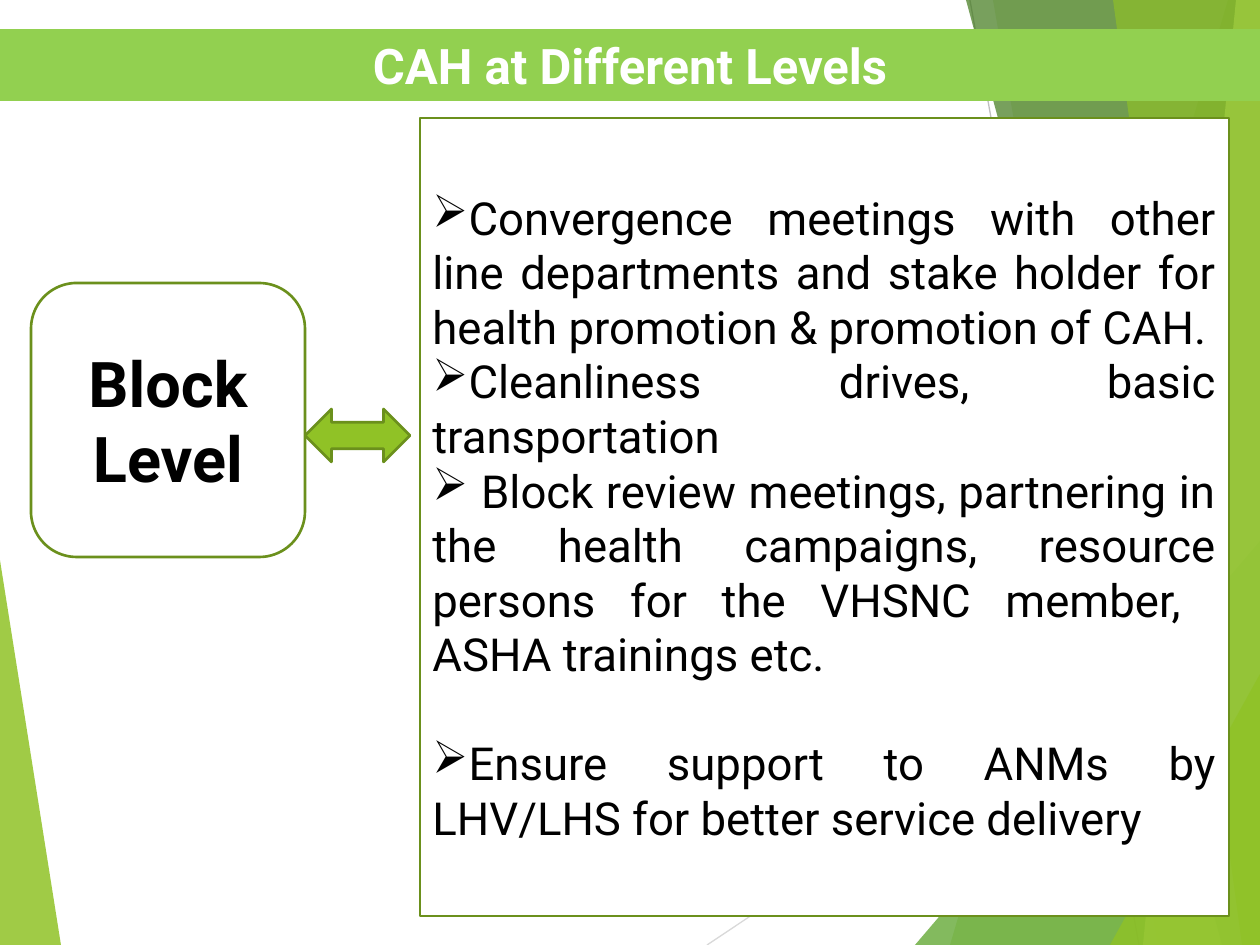
from lxml import etree
from pptx import Presentation
from pptx.dml.color import RGBColor
from pptx.enum.shapes import MSO_CONNECTOR, MSO_SHAPE
from pptx.enum.text import MSO_ANCHOR, PP_ALIGN
from pptx.oxml.ns import qn
from pptx.util import Pt

EMU_PER_PX = 914400 / 126
WIDTH, HEIGHT = 1260, 945
STRAIGHT = MSO_CONNECTOR.STRAIGHT
RECT, ROUNDED = MSO_SHAPE.RECTANGLE, MSO_SHAPE.ROUNDED_RECTANGLE
DOUBLE_ARROW = MSO_SHAPE.LEFT_RIGHT_ARROW
MIDDLE = MSO_ANCHOR.MIDDLE
CENTER, JUSTIFY = PP_ALIGN.CENTER, PP_ALIGN.JUSTIFY

GREEN, DARK_GREEN, TITLE_GREEN = "90C226", "6B901C", "92D050"
WHITE, BLACK = "FFFFFF", "000000"

# Facets: points, colour, opacity in percent
LEFT_FACET = ([(0, 560), (61, HEIGHT), (0, HEIGHT)], GREEN, 85)


def band(top_x, bottom_x):
    """Full-height facet reaching to the right edge of the slide."""
    return [(top_x, 0), (bottom_x, HEIGHT), (WIDTH, HEIGHT), (WIDTH, 0)]


def corner(left, top):
    """Triangle in the lower right corner of the slide."""
    return [(left, HEIGHT), (WIDTH, top), (WIDTH, HEIGHT)]


RIGHT_FACETS = [
    (band(1228, 950), GREEN, 30),
    (band(993, 1158), GREEN, 20),
    (corner(915, 541), "54A021", 72),
    (band(966, 1222), "3F7819", 70),
    (band(1236, 1143), "C0E474", 70),
    (band(1113, 1242), GREEN, 65),
    (corner(1110, 674), GREEN, 80),
]

ACTIVITIES = [
    "Convergence meetings with other line departments and stake holder "
    "for health promotion & promotion of CAH.",
    "Cleanliness drives, basic transportation",
    " Block review meetings, partnering in the health campaigns, resource "
    "persons for the VHSNC member,  ASHA trainings etc.",
    "Ensure support to ANMs by LHV/LHS for better service delivery",
]


def px(n):
    return round(n * EMU_PER_PX)


def rgb(value):
    return RGBColor.from_string(value)


class SlideBuilder:
    font = "Roboto"
    line_width = Pt(1.5)

    def __init__(self, slide):
        self.slide = slide

    def facet(self, points, color, opacity):
        start, *rest = points
        builder = self.slide.shapes.build_freeform(*start, scale=EMU_PER_PX)
        builder.add_line_segments(rest, close=True)
        sp = builder.convert_to_shape()
        sp.shadow.inherit = False
        sp.fill.solid()
        sp.fill.fore_color.rgb = rgb(color)
        sp.line.fill.background()
        fill_color = sp.fill._xPr.find(qn("a:solidFill"))[0]
        etree.SubElement(fill_color, qn("a:alpha"), val=str(opacity * 1000))

    def line(self, x1, y1, x2, y2, color):
        c = self.slide.shapes.add_connector(STRAIGHT, px(x1), px(y1), px(x2), px(y2))
        c.line.color.rgb = rgb(color)
        c.line.width = Pt(0.75)
        etree.SubElement(c._element.spPr, qn("a:effectLst"))

    def shape(self, kind, x, y, w, h, fill, line=None):
        sp = self.slide.shapes.add_shape(kind, px(x), px(y), px(w), px(h))
        sp.shadow.inherit = False
        sp.fill.solid()
        sp.fill.fore_color.rgb = rgb(fill)
        if line:
            sp.line.color.rgb = rgb(line)
            sp.line.width = self.line_width
        else:
            sp.line.fill.background()
        return sp

    def text(self, sp, paragraphs, size, color, align, bold=False, bullet=None):
        tf = sp.text_frame
        tf.word_wrap = True
        tf.vertical_anchor = MIDDLE
        for i, content in enumerate(paragraphs):
            p = tf.paragraphs[0] if i == 0 else tf.add_paragraph()
            p.text = content
            p.alignment = align
            p.font.name, p.font.size, p.font.bold = self.font, Pt(size), bold
            p.font.color.rgb = rgb(color)
            if bullet:
                mark = etree.Element(qn("a:buChar"), char=bullet)
                p._p.get_or_add_pPr().insert(0, mark)
        return tf


def main():
    prs = Presentation()
    prs.slide_width, prs.slide_height = px(WIDTH), px(HEIGHT)
    s = SlideBuilder(prs.slides.add_slide(prs.slide_layouts[6]))

    s.facet(*LEFT_FACET)
    s.line(707, HEIGHT, WIDTH, 576, "D9D9D9")
    s.line(970, 0, 1139, HEIGHT, "BFBFBF")
    for facet in RIGHT_FACETS:
        s.facet(*facet)

    activities = s.shape(RECT, 420, 118, 809, 798, WHITE, DARK_GREEN)
    tf = s.text(activities, ACTIVITIES, 26, BLACK, JUSTIFY, bullet="➢")
    tf.paragraphs[-1].space_before = Pt(31)

    level = s.shape(ROUNDED, 31, 283, 274, 274, WHITE, DARK_GREEN)
    s.text(level, ["Block Level"], 36, BLACK, CENTER, bold=True)
    s.shape(DOUBLE_ARROW, 305, 409, 105, 53, GREEN, DARK_GREEN)

    title = s.shape(RECT, 0, 29, WIDTH, 72, TITLE_GREEN)
    s.text(title, ["CAH at Different Levels"], 28, WHITE, CENTER, bold=True)

    prs.save("out.pptx")


if __name__ == "__main__":
    main()
